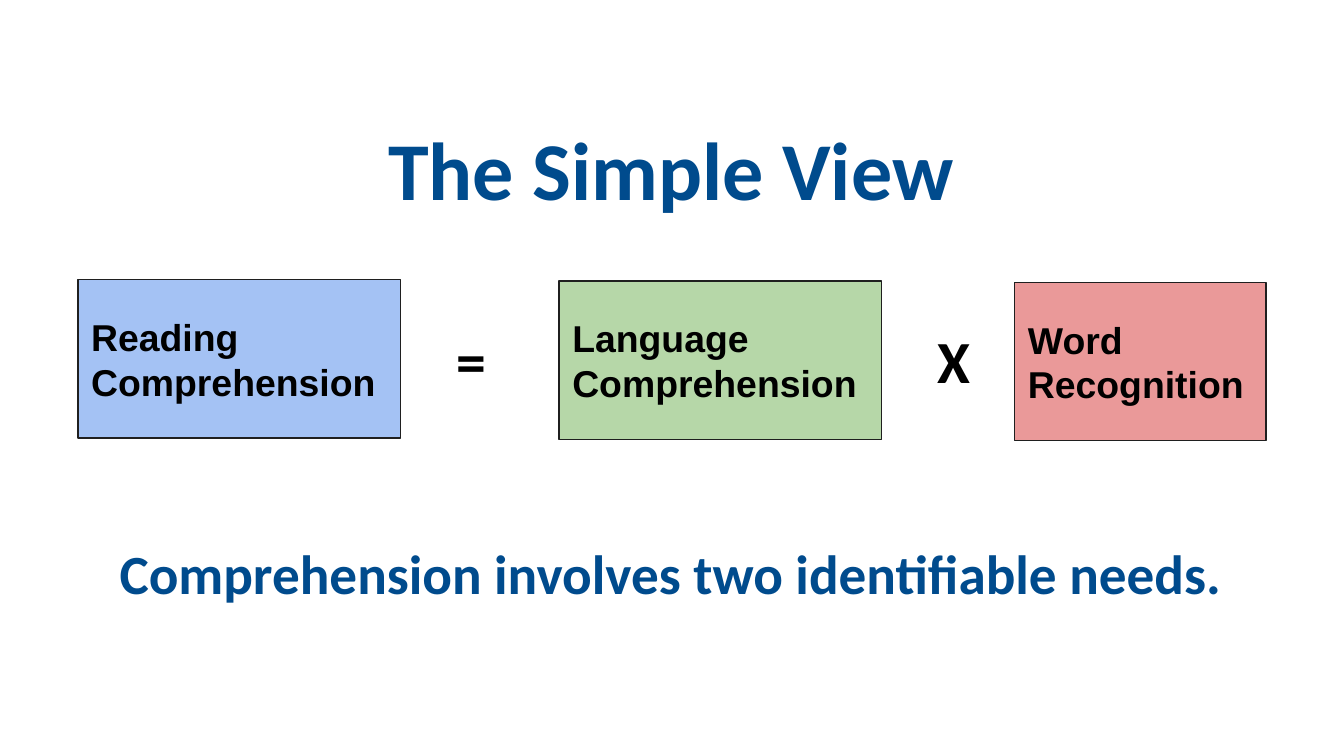
"""Build the Simple View of Reading slide."""
from pptx import Presentation
from pptx import util as u
from pptx.dml.color import RGBColor
from pptx.enum import shapes, text
from pptx.oxml.ns import qn
from lxml import etree

PX = u.Inches(1) // 100
NAVY, BLACK, OUTLINE = "004B8D", "000000", "1F1F1F"


def color(value):
    return RGBColor.from_string(value)


def write(box, lines, font, size, ink, align, inset, **frame_format):
    frame = box.text_frame
    frame.text = "\n".join(lines)
    margins = {"margin_left": 10 * PX, "margin_right": 10 * PX,
               "margin_top": inset * PX, "margin_bottom": inset * PX}
    for name, value in {"word_wrap": True, **margins, **frame_format}.items():
        setattr(frame, name, value)
    for paragraph in frame.paragraphs:
        paragraph.alignment = align
        paragraph.space_before = u.Pt(0)
        for name, value in {"name": font, "size": u.Pt(size), "bold": True}.items():
            setattr(paragraph.runs[0].font, name, value)
        paragraph.runs[0].font.color.rgb = color(ink)


prs = Presentation()
prs.slide_width = 1000 * PX
prs.slide_height = prs.slide_width * 9 // 16
slide = prs.slides.add_slide(prs.slide_layouts[1])

title, takeaway = slide.placeholders
for holder, top, height, line, size, anchor in [
    (title, 81, 88, "The Simple View", 44, text.MSO_ANCHOR.MIDDLE),
    (takeaway, 396, 106, "Comprehension involves two identifiable needs.", 29.6,
     text.MSO_ANCHOR.TOP),
]:
    place = {"left": 58, "top": top, "width": 883, "height": height}
    for name, value in place.items():
        setattr(holder, name, value * PX)
    write(holder, [line], "Calibri", size, NAVY, text.PP_ALIGN.CENTER, 5,
          vertical_anchor=anchor, auto_size=text.MSO_AUTO_SIZE.NONE)

takeaway_format = takeaway.text_frame.paragraphs[0]._p.get_or_add_pPr()
takeaway_format.set("marL", "0")
takeaway_format.set("indent", "0")
etree.SubElement(takeaway_format, qn("a:buNone"))

for left, top, width, fill, words in [
    (58, 208, 240, "A4C2F4", ["Reading", "Comprehension"]),
    (416, 209, 240, "B6D7A8", ["Language", "Comprehension"]),
    (755, 210, 187, "EA9999", ["Word", "Recognition"]),
]:
    factor = slide.shapes.add_shape(shapes.MSO_SHAPE.RECTANGLE, left * PX, top * PX,
                                    width * PX, 118 * PX)
    factor.shadow.inherit = False
    factor.fill.solid()
    factor.fill.fore_color.rgb = color(fill)
    factor.line.color.rgb = color(OUTLINE)
    factor.line.width = u.Pt(0.75)
    write(factor, words, "Arial", 20, BLACK, text.PP_ALIGN.LEFT, 10,
          vertical_anchor=text.MSO_ANCHOR.MIDDLE)

for left, width, symbol in [(330, 54, "="), (688, 34, "X")]:
    operator = slide.shapes.add_textbox(left * PX, 231 * PX, width * PX, 74 * PX)
    write(operator, [symbol], "Calibri", 32, BLACK, text.PP_ALIGN.LEFT, 10,
          auto_size=text.MSO_AUTO_SIZE.SHAPE_TO_FIT_TEXT)

prs.save("out.pptx")
